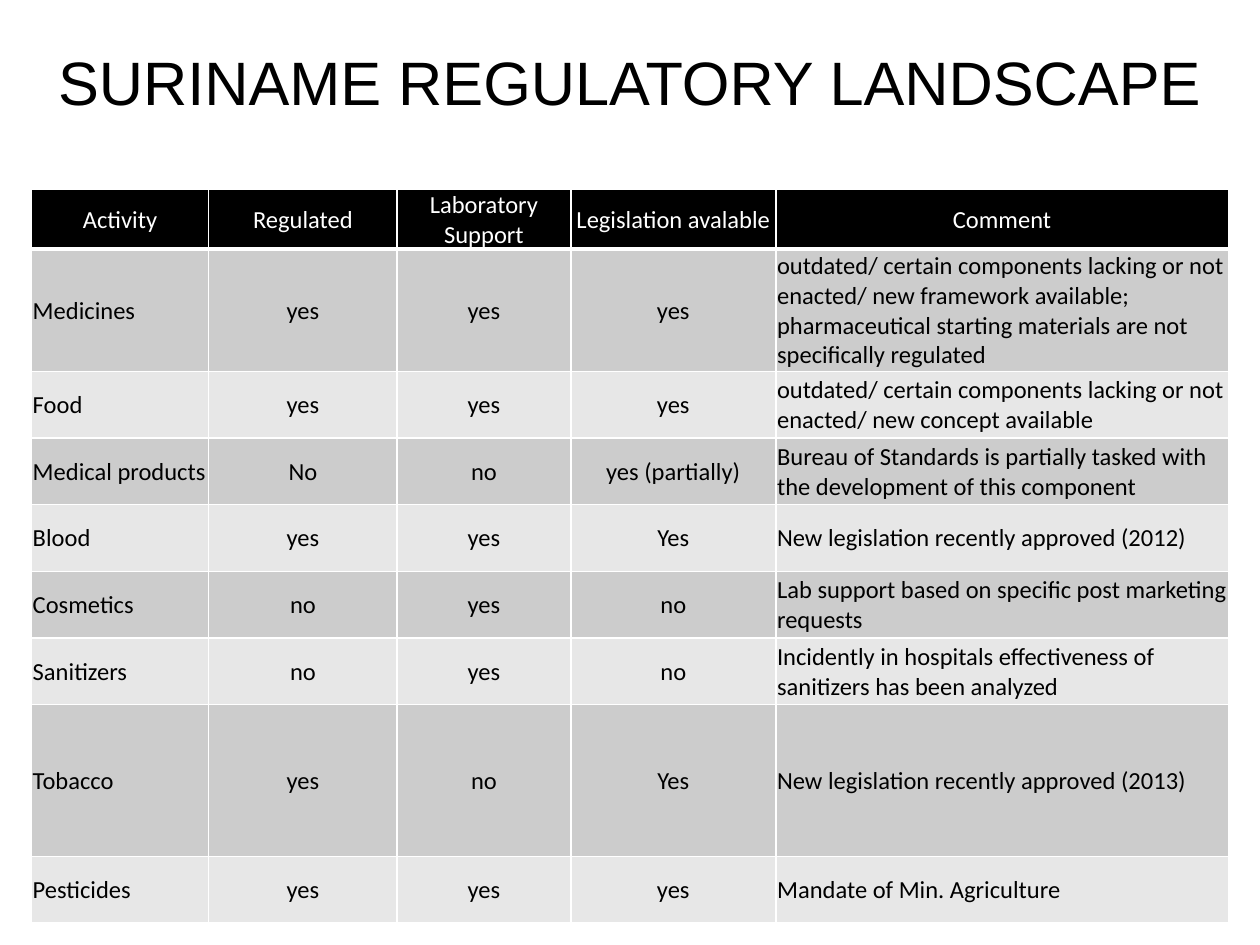
from lxml.etree import SubElement
from pptx import Presentation
from pptx.dml.color import RGBColor
from pptx.enum.text import MSO_ANCHOR, PP_ALIGN
from pptx.oxml.ns import qn
from pptx.util import Pt

BLACK, WHITE = "000000", "FFFFFF"
BANDS = ("CCCCCC", "E7E7E7")
COLUMN_WIDTHS = (101.3, 107.7, 99.2, 117.2, 258.6)
HEADER_HEIGHT, ROW_HEIGHT = 29.5, 38.1
TALL_ROWS = {"Medicines": 69.8, "Tobacco": 86.8}
CENTERED_COLUMNS = (1, 2, 3)

HEADER = ("Activity", "Regulated", "Laboratory Support", "Legislation avalable", "Comment")
ACTIVITIES = (
    ("Medicines", "yes", "yes", "yes",
     "outdated/ certain components lacking or not enacted/ new framework available; "
     "pharmaceutical starting materials are not specifically regulated"),
    ("Food", "yes", "yes", "yes",
     "outdated/ certain components lacking or not enacted/ new concept available"),
    ("Medical products", "No", "no", "yes (partially)",
     "Bureau of Standards is partially tasked with the development of this component"),
    ("Blood", "yes", "yes", "Yes", "New legislation recently approved (2012)"),
    ("Cosmetics", "no", "yes", "no", "Lab support based on specific post marketing requests"),
    ("Sanitizers", "no", "yes", "no",
     "Incidently in hospitals effectiveness of sanitizers has been analyzed"),
    ("Tobacco", "yes", "no", "Yes", "New legislation recently approved (2013)"),
    ("Pesticides", "yes", "yes", "yes", "Mandate of Min. Agriculture"),
)


def rgb(color):
    return RGBColor.from_string(color)


def write_text(text_frame, text, font_name, size, color, centered):
    text_frame.text = text
    paragraph = text_frame.paragraphs[0]
    paragraph.alignment = PP_ALIGN.CENTER if centered else PP_ALIGN.LEFT
    font = paragraph.runs[0].font
    font.name, font.size, font.color.rgb = font_name, Pt(size), rgb(color)


def add_title(slide, text):
    title = slide.shapes.add_textbox(Pt(0), Pt(21.6), Pt(720), Pt(90))
    title.text_frame.word_wrap = True
    write_text(title.text_frame, text, "Arial", 35, BLACK, True)


def set_borders(cell, bottom_width):
    """Draw white cell borders; they must come before the fill in the XML."""
    properties = cell._tc.get_or_add_tcPr()
    for side, width in (("L", 1), ("R", 1), ("T", 1), ("B", bottom_width)):
        line = SubElement(properties, qn(f"a:ln{side}"), w=str(Pt(width)))
        fill = SubElement(line, qn("a:solidFill"))
        SubElement(fill, qn("a:srgbClr"), val=WHITE)


def fill_cell(cell, text, fill, color, centered, bottom_width):
    set_borders(cell, bottom_width)
    cell.fill.solid()
    cell.fill.fore_color.rgb = rgb(fill)
    cell.vertical_anchor = MSO_ANCHOR.MIDDLE
    cell.margin_left = cell.margin_right = cell.margin_top = Pt(0.72)
    cell.margin_bottom = Pt(0)
    write_text(cell.text_frame, text, "Calibri", 14, color, centered)


def add_activity_table(slide):
    heights = [HEADER_HEIGHT] + [TALL_ROWS.get(row[0], ROW_HEIGHT) for row in ACTIVITIES]
    table = slide.shapes.add_table(
        len(heights), len(HEADER), Pt(18), Pt(108),
        Pt(sum(COLUMN_WIDTHS)), Pt(sum(heights))).table
    for column, width in zip(table.columns, COLUMN_WIDTHS):
        column.width = Pt(width)
    for row, height in zip(table.rows, heights):
        row.height = Pt(height)

    for column, text in enumerate(HEADER):
        fill_cell(table.cell(0, column), text, BLACK, WHITE, True, 3)
    for index, activity in enumerate(ACTIVITIES):
        for column, text in enumerate(activity):
            fill_cell(table.cell(index + 1, column), text, BANDS[index % 2], BLACK,
                      column in CENTERED_COLUMNS, 1)


def main():
    presentation = Presentation()
    presentation.slide_width, presentation.slide_height = Pt(720), Pt(540)
    slide = presentation.slides.add_slide(presentation.slide_layouts[6])
    add_title(slide, "SURINAME REGULATORY LANDSCAPE")
    add_activity_table(slide)
    presentation.save("out.pptx")


if __name__ == "__main__":
    main()
